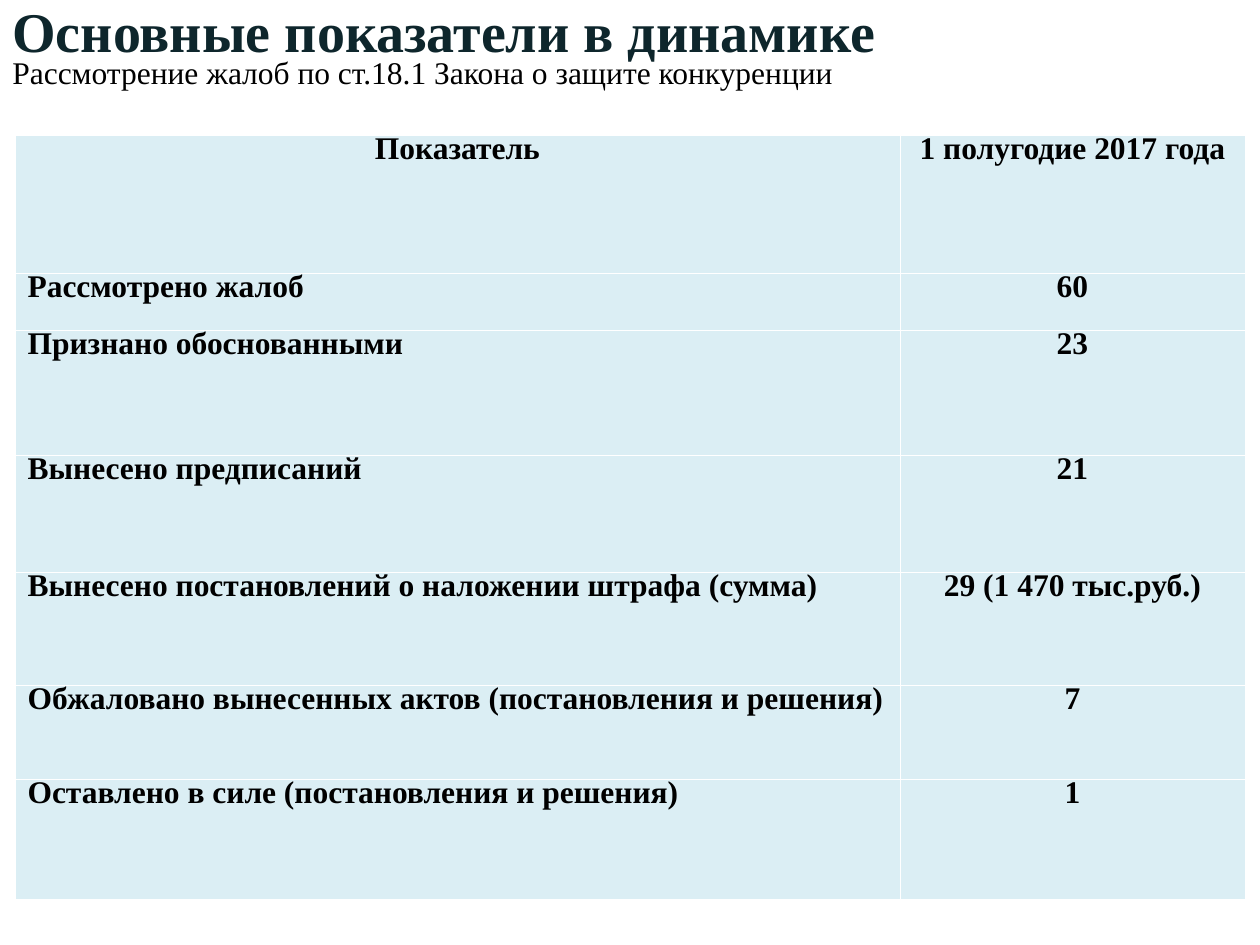
from typing import NamedTuple

from lxml.etree import SubElement
from pptx import Presentation
from pptx.dml.color import RGBColor
from pptx.enum.text import MSO_ANCHOR, PP_ALIGN
from pptx.oxml.ns import qn
from pptx.util import Emu, Pt

FONT = "Times New Roman"


class Row(NamedTuple):
    label: str
    value: str
    height: int


ROWS = [
    Row("Показатель", "1 полугодие 2017 года", 138),
    Row("Рассмотрено жалоб", "60", 57),
    Row("Признано обоснованными", "23", 125),
    Row("Вынесено предписаний", "21", 117),
    Row("Вынесено постановлений о наложении штрафа (сумма)", "29 (1 470 тыс.руб.)", 113),
    Row("Обжаловано вынесенных актов (постановления и решения)", "7", 94),
    Row("Оставлено в силе (постановления и решения)", "1", 120),
]
COLUMNS = [885, 345]


def px(n: int) -> Emu:
    return Emu(round(n * 914400 / 126))


def rgb(color: str) -> RGBColor:
    return RGBColor.from_string(color)


def write(p, text: str, *, size=18, color="000000", bold=True, align=PP_ALIGN.LEFT, spacing=0.66):
    p.alignment = align
    p.line_spacing = spacing
    r = p.add_run()
    r.text = text
    r.font.name = FONT
    r.font.size = Pt(size)
    r.font.bold = bold
    r.font.color.rgb = rgb(color)


def set_borders(cell, color: str, width: float):
    tc_pr = cell._tc.get_or_add_tcPr()
    for side in ("lnL", "lnR", "lnT", "lnB"):
        ln = SubElement(tc_pr, qn(f"a:{side}"), w=str(Pt(width)))
        fill = SubElement(ln, qn("a:solidFill"))
        SubElement(fill, qn("a:srgbClr"), val=color)


def draw_heading(slide):
    left, top, right, bottom = px(0), px(5), px(1260), px(88)
    builder = slide.shapes.build_freeform(left, top)
    builder.add_line_segments([(right, top), (right, bottom), (left, bottom)])
    sp = builder.convert_to_shape()
    sp.shadow.inherit = False
    sp.fill.background()
    sp.line.fill.background()
    tf = sp.text_frame
    tf.word_wrap = True
    tf.vertical_anchor = MSO_ANCHOR.MIDDLE
    write(tf.paragraphs[0], "Основные показатели в динамике", size=32, color="0E262C", spacing=0.9)
    write(tf.add_paragraph(), "Рассмотрение жалоб по ст.18.1 Закона о защите конкуренции", bold=False)


def draw_table(slide, rows: list[Row], columns: list[int]):
    height = sum(row.height for row in rows)
    table = slide.shapes.add_table(
        len(rows), len(columns), px(15), px(135), px(sum(columns)), px(height)
    ).table
    table.first_row = table.horz_banding = False
    for column, width in zip(table.columns, columns):
        column.width = px(width)
    for i, row in enumerate(rows):
        table.rows[i].height = px(row.height)
        for j, text in enumerate((row.label, row.value)):
            cell = table.cell(i, j)
            set_borders(cell, "FFFFFF", 0.06)
            cell.fill.solid()
            cell.fill.fore_color.rgb = rgb("DBEEF4")
            align = PP_ALIGN.LEFT if i and not j else PP_ALIGN.CENTER
            write(cell.text_frame.paragraphs[0], text, align=align)


def main():
    """Build the slide with the complaint statistics table."""
    prs = Presentation()
    prs.slide_width, prs.slide_height = px(1260), px(945)
    slide = prs.slides.add_slide(prs.slide_layouts[6])
    draw_heading(slide)
    draw_table(slide, ROWS, COLUMNS)
    prs.save("out.pptx")


if __name__ == "__main__":
    main()
